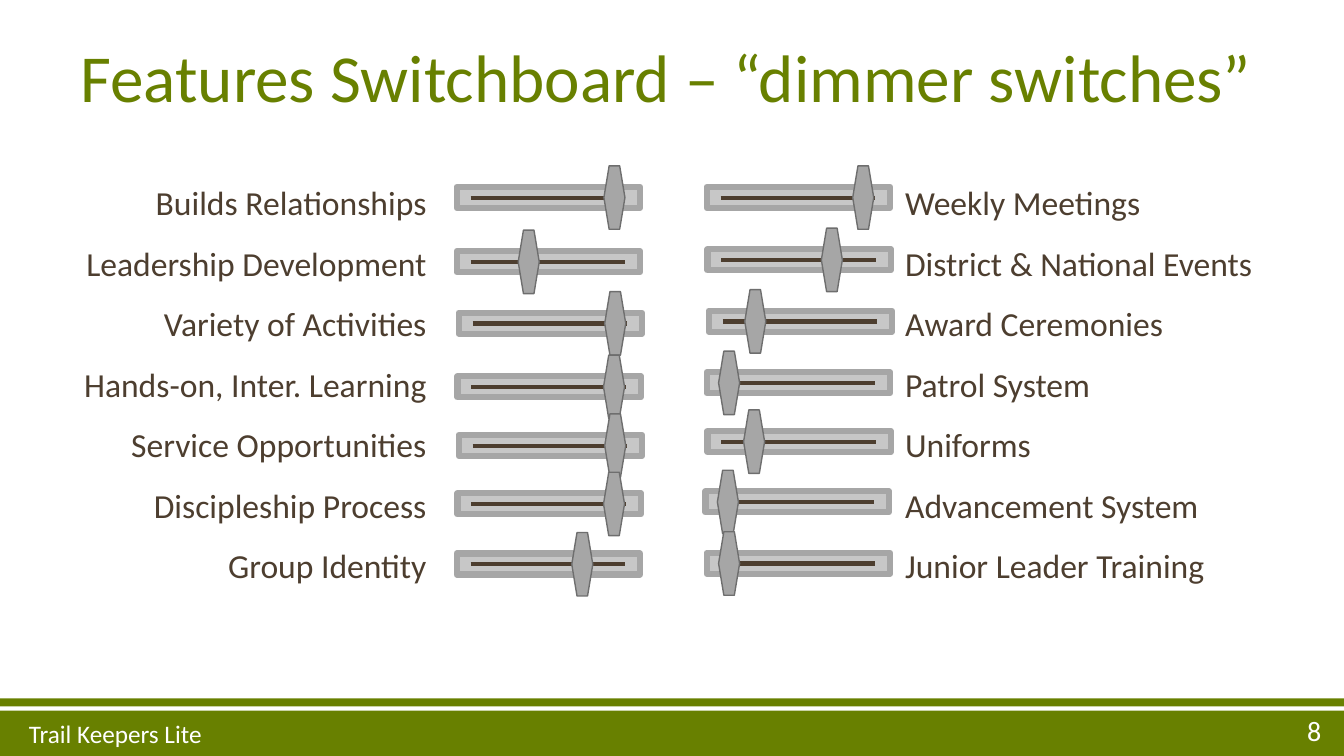
"""Build the features switchboard slide with two columns of dimmer switches."""
import dataclasses
import pptx
import pptx.util
import pptx.dml.color
import pptx.enum.shapes
import pptx.enum.text
import lxml.etree

Cm = pptx.util.Cm
Pt = pptx.util.Pt
RGB = pptx.dml.color.RGBColor.from_string
Kind = pptx.enum.shapes.MSO_SHAPE
Align = pptx.enum.text.PP_ALIGN
Anchor = pptx.enum.text.MSO_ANCHOR
Fit = pptx.enum.text.MSO_AUTO_SIZE


@dataclasses.dataclass(frozen=True)
class Theme:
    font: str = "Calibri"
    green: str = "688000"
    white: str = "FFFFFF"
    brown: str = "4D3E2F"
    track: str = "C7C7C7"
    grey: str = "A6A6A6"
    edge: str = "6E6E6E"
    title: int = 48
    label: int = 24
    page: int = 20
    foot: int = 18


theme = Theme()
deck = pptx.Presentation()
deck.slide_width = Cm(33.87)
deck.slide_height = Cm(19.05)
slide = deck.slides.add_slide(deck.slide_layouts[6])


def add_form(home, kind, box, fill, edge=None, width=0):
    form = home.add_shape(kind, *map(Cm, box))
    form.shadow.inherit = False
    form.fill.solid()
    form.fill.fore_color.rgb = RGB(fill)
    if edge:
        form.line.color.rgb = RGB(edge)
        form.line.width = Pt(width)
    else:
        form.line.fill.background()


def add_text(box, lines, size, color, align=Align.LEFT, anchor=Anchor.TOP, space=1.0):
    frame = slide.shapes.add_textbox(*map(Cm, box)).text_frame
    frame.word_wrap = True
    frame.auto_size = Fit.NONE
    frame.vertical_anchor = anchor
    for num, line in enumerate(lines):
        para = frame.add_paragraph() if num else frame.paragraphs[0]
        para.alignment = align
        para.line_spacing = space
        run = para.add_run()
        run.text = line
        run.font.name = theme.font
        run.font.size = Pt(size)
        run.font.color.rgb = RGB(color)


for top, high in ((17.91, 1.14), (17.6, 0.2)):
    add_form(slide.shapes, Kind.RECTANGLE, (0, top, 33.87, high), theme.green)

add_text((31.29, 17.83, 2.26, 1.14), ["8"], theme.page, theme.white,
         Align.RIGHT, Anchor.MIDDLE)
add_text((0.48, 17.91, 21.95, 1.14), ["Trail Keepers Lite"], theme.foot, theme.white,
         anchor=Anchor.MIDDLE)
add_text((1.78, 0.76, 31.14, 1.96), ["Features Switchboard – “dimmer switches”"],
         theme.title, theme.green)

# Each row: label, track left, rail height, knob offset
left = [
    ("Builds Relationships", 11.51, 4.98, 3.71),
    ("Leadership Development", 11.51, 6.6, 1.55),
    ("Variety of Activities", 11.56, 8.15, 3.68),
    ("Hands-on, Inter. Learning", 11.53, 9.75, 3.68),
    ("Service Opportunities", 11.56, 11.23, 3.68),
    ("Discipleship Process", 11.53, 12.7, 3.68),
    ("Group Identity", 11.51, 14.22, 2.9),
]
right = [
    ("Weekly Meetings", 17.81, 4.98, 3.68),
    ("District & National Events", 17.83, 6.55, 2.87),
    ("Award Ceremonies", 17.86, 8.1, 0.91),
    ("Patrol System", 17.81, 9.65, 0.3),
    ("Uniforms", 17.83, 11.13, 0.91),
    ("Advancement System", 17.78, 12.65, 0.3),
    ("Junior Leader Training", 17.81, 14.2, 0.3),
]

for rows, box, align in ((left, (0, 3.96, 11, 11.02), Align.RIGHT),
                         (right, (22.56, 3.96, 10.34, 10.87), Align.LEFT)):
    add_text(box, [row[0] for row in rows], theme.label, theme.brown, align, space=1.5)
    for label, x, y, knob in rows:
        dimmer = slide.shapes.add_group_shape().shapes
        add_form(dimmer, Kind.RECTANGLE, (x, y - 0.27, 4.62, 0.53),
                 theme.track, theme.grey, 4.5)
        rail = dimmer.add_connector(pptx.enum.shapes.MSO_CONNECTOR.STRAIGHT,
                                    Cm(x + 0.35), Cm(y), Cm(x + 4.24), Cm(y))
        rail.line.color.rgb = RGB(theme.brown)
        rail.line.width = Pt(3)
        lxml.etree.SubElement(rail._element.spPr, pptx.oxml.ns.qn("a:effectLst"))
        add_form(dimmer, Kind.HEXAGON, (x + knob, y - 0.8, 0.53, 1.6),
                 theme.grey, theme.edge, 1)

deck.save("out.pptx")
